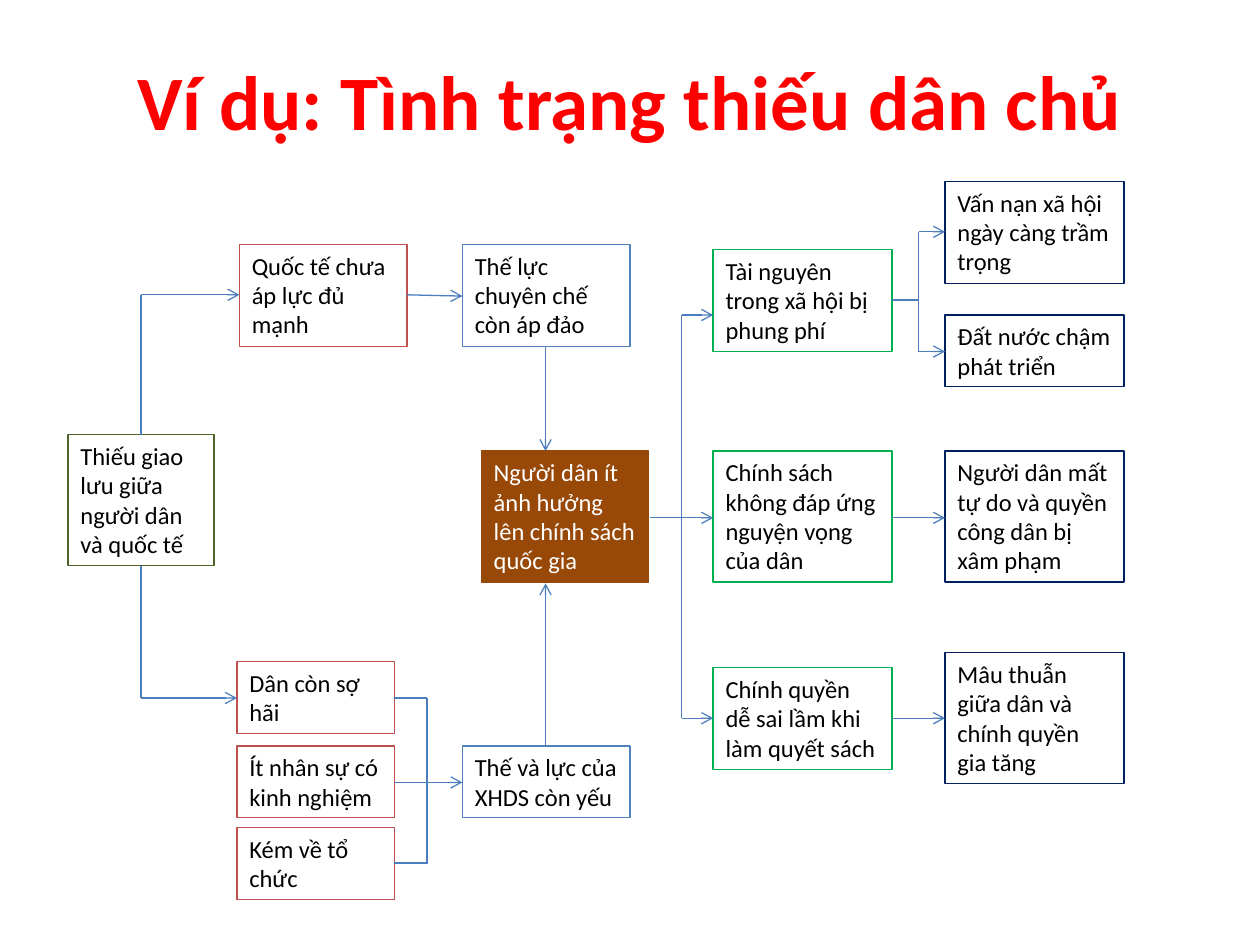
from lxml.etree import SubElement
from pptx import Presentation
from pptx.dml.color import RGBColor
from pptx.enum.shapes import MSO_CONNECTOR
from pptx.enum.text import MSO_ANCHOR, MSO_AUTO_SIZE, PP_ALIGN
from pptx.oxml.ns import qn
from pptx.util import Inches, Pt

COLORS = {
    "title": "FF0000", "text": "000000", "light": "FFFFFF", "arrow": "4B7EBC",
    "root": "4F6228", "cause": "C0504D", "force": "4F81BD", "core": "984807",
    "effect": "00B050", "outcome": "002060",
}
BOX_HEIGHTS = {2: 0.57, 3: 0.81, 4: 1.04}  # by number of text lines


def format_text(frame, text, **font_values):
    para = frame.paragraphs[0]
    span = para.add_run()
    span.text = text
    color = font_values.pop("color")
    span.font.color.rgb = RGBColor.from_string(COLORS[color])
    for name, value in {"name": "Calibri", **font_values}.items():
        setattr(span.font, name, value)
    return para


def add_line(page, start, end, arrow):
    line = page.shapes.add_connector(
        MSO_CONNECTOR.STRAIGHT, *(Inches(value) for value in start + end))
    line.line.color.rgb = RGBColor.from_string(COLORS["arrow"])
    line.line.width = Pt(0.75)
    if arrow:
        SubElement(line.line._get_or_add_ln(), qn("a:tailEnd"), type="arrow")
    SubElement(line._element.spPr, qn("a:effectLst"))


deck = Presentation()
deck.slide_width, deck.slide_height = Inches(10), Inches(7.5)
page = deck.slides.add_slide(deck.slide_layouts[5])

title = page.shapes.title
title_place = {"left": 0.5, "top": 0.17, "width": 9, "height": 1.25}
for name, value in title_place.items():
    setattr(title, name, Inches(value))
title.text_frame.vertical_anchor = MSO_ANCHOR.MIDDLE
title_para = format_text(title.text_frame, "Ví dụ: Tình trạng thiếu dân chủ",
                         size=Pt(44), bold=True, color="title")
title_para.alignment = PP_ALIGN.CENTER

# Each column: kind, left, width, then (top, text lines, text) for its boxes
columns = [
    ("root", 0.54, 1.16, [(3.45, 4, "Thiếu giao lưu giữa người dân và quốc tế")]),
    ("cause", 1.9, 1.33, [(1.94, 3, "Quốc tế chưa áp lực đủ mạnh")]),
    ("cause", 1.88, 1.25, [
        (5.25, 2, "Dân còn sợ hãi"),
        (5.92, 2, "Ít nhân sự có kinh nghiệm"),
        (6.57, 2, "Kém về tổ chức")]),
    ("force", 3.67, 1.33, [
        (1.94, 3, "Thế lực chuyên chế còn áp đảo"),
        (5.92, 2, "Thế và lực của XHDS còn yếu")]),
    ("core", 3.82, 1.33, [
        (3.58, 4, "Người dân ít ảnh hưởng lên chính sách quốc gia")]),
    ("effect", 5.66, 1.42, [
        (1.98, 3, "Tài nguyên trong xã hội bị phung phí"),
        (3.58, 4, "Chính sách không đáp ứng nguyện vọng của dân"),
        (5.3, 3, "Chính quyền dễ sai lầm khi làm quyết sách")]),
    ("outcome", 7.5, 1.42, [
        (1.44, 3, "Vấn nạn xã hội ngày càng trầm trọng"),
        (2.5, 2, "Đất nước chậm phát triển"),
        (3.58, 4, "Người dân mất tự do và quyền công dân bị xâm phạm"),
        (5.18, 4, "Mâu thuẫn giữa dân và chính quyền gia tăng")]),
]
for kind, left, width, entries in columns:
    for top, line_count, text in entries:
        box = page.shapes.add_textbox(Inches(left), Inches(top), Inches(width),
                                      Inches(BOX_HEIGHTS[line_count]))
        box.line.color.rgb = RGBColor.from_string(COLORS[kind])
        box.line.width = Pt(0.75)
        if kind == "core":
            box.fill.solid()
            box.fill.fore_color.rgb = RGBColor.from_string(COLORS["core"])
        frame = box.text_frame
        frame.word_wrap = True
        frame.auto_size = MSO_AUTO_SIZE.SHAPE_TO_FIT_TEXT
        format_text(frame, text, size=Pt(14),
                    color="light" if kind == "core" else "text")

plain_lines = [
    ((1.12, 3.45), (1.12, 2.34)), ((1.12, 4.49), (1.12, 5.54)),  # from the root
    ((3.13, 5.54), (3.39, 5.54)), ((3.13, 6.85), (3.39, 6.85)),  # local causes
    ((3.39, 5.54), (3.39, 6.86)),
    ((5.16, 4.11), (5.41, 4.11)), ((5.41, 2.5), (5.41, 5.7)),  # to the effects
    ((7.08, 2.38), (7.29, 2.38)), ((7.29, 1.84), (7.29, 2.79)),  # to the outcomes
]
arrows = [
    ((1.12, 2.34), (1.9, 2.34)), ((1.12, 5.54), (1.88, 5.54)),
    ((3.23, 2.34), (3.67, 2.35)), ((3.13, 6.21), (3.67, 6.21)),
    ((4.33, 2.75), (4.33, 3.58)), ((4.33, 5.92), (4.33, 4.63)),
    *(((5.41, y), (5.66, y)) for y in (2.5, 4.11, 5.7)),
    *(((7.08, y), (7.5, y)) for y in (4.11, 5.7)),
    *(((7.29, y), (7.5, y)) for y in (1.84, 2.79)),
]
for lines, has_arrow in ((plain_lines, False), (arrows, True)):
    for start, end in lines:
        add_line(page, start, end, has_arrow)

deck.save("out.pptx")
